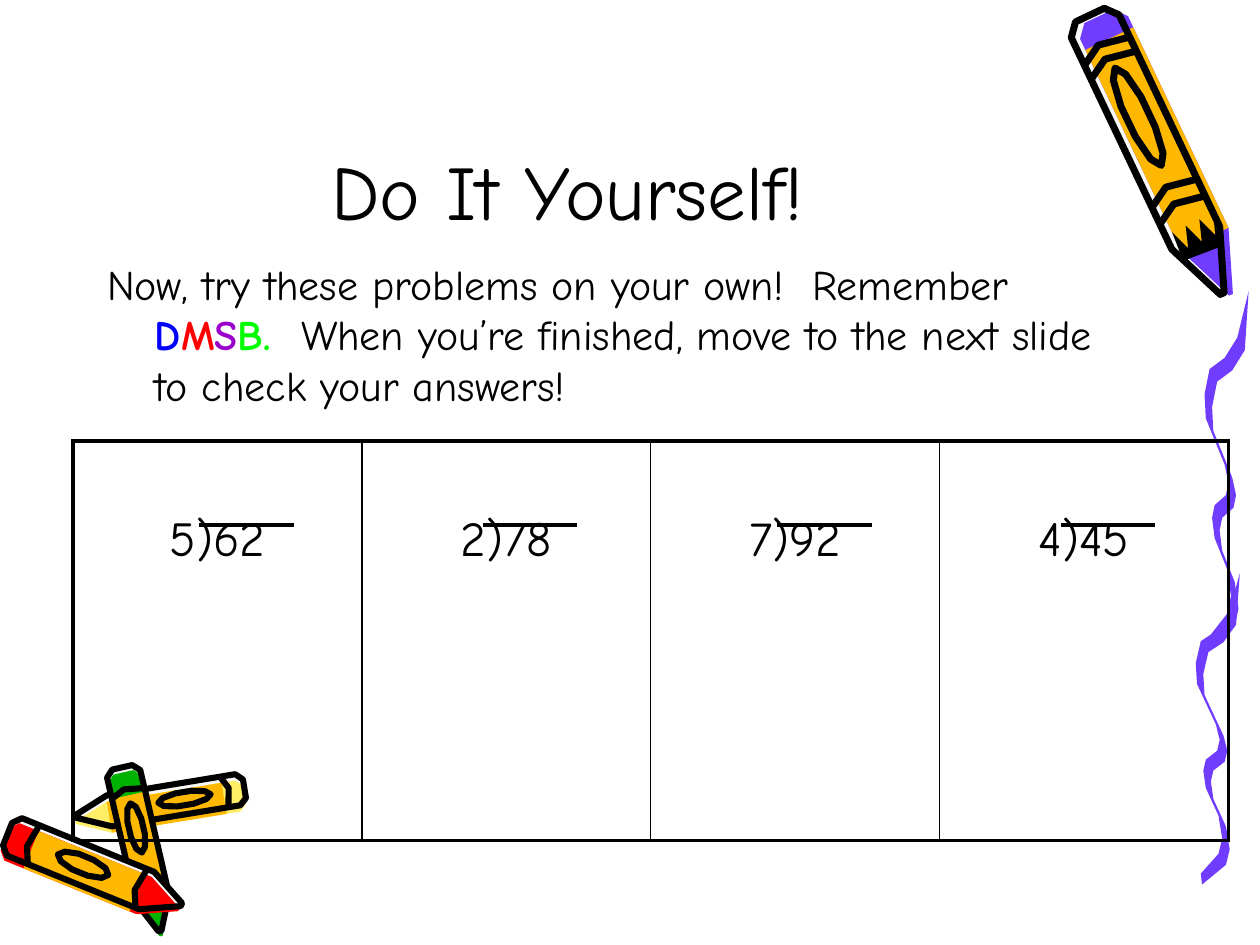
from dataclasses import dataclass
from itertools import cycle
from math import cos, hypot, pi, sin

from lxml import etree
from pptx import Presentation
from pptx.dml.color import RGBColor
from pptx.enum.shapes import MSO_CONNECTOR
from pptx.enum.text import MSO_ANCHOR, MSO_AUTO_SIZE, PP_ALIGN
from pptx.oxml.ns import qn
from pptx.util import Inches, Pt

BLACK = RGBColor(0x00, 0x00, 0x00)
PAPER = RGBColor(0xF8, 0xF8, 0xF8)
PURPLE = RGBColor(0x70, 0x3D, 0xFF)
ORANGE = RGBColor(0xFF, 0xB8, 0x00)
YELLOW = RGBColor(0xFF, 0xEF, 0x66)
RED = RGBColor(0xFF, 0x00, 0x00)
GREEN = RGBColor(0x00, 0xB2, 0x00)
DIVIDE_BLUE = RGBColor(0x00, 0x00, 0xFF)
SUBTRACT_VIOLET = RGBColor(0x99, 0x00, 0xCC)
BRING_DOWN_GREEN = RGBColor(0x00, 0xFF, 0x00)

INSTRUCTIONS = [
    ("Now, try these problems on your own!  Remember ", BLACK, False),
    ("D", DIVIDE_BLUE, True),
    ("M", RED, True),
    ("S", SUBTRACT_VIOLET, True),
    ("B.  ", BRING_DOWN_GREEN, True),
    ("When you’re finished, move to the next slide to check your answers!", BLACK, False),
]
PROBLEMS = ["5)62", "2)78", "7)92", "4)45"]
DIVISION_BAR_LEFTS = [1.58, 3.83, 6.17, 8.42]


@dataclass
class Crayon:
    """Shape along its axis: 0 is the blunt end, 1 the tip; -0.5 to 0.5 goes across."""
    wax: RGBColor
    butt: tuple
    tip: tuple
    width: float
    wrapper: tuple        # start and end of the paper wrapper along the axis
    bands: tuple          # ink rings along the axis
    oval: tuple           # start and end of the label along the axis
    color_shift: tuple    # the colour is printed slightly beside the ink
    ink: float = 3.5
    teeth: int = 0        # jagged ink marks where the wrapper ends
    shoulder: float = 0.8

    def points(self, local_points, shift=(0, 0)):
        """Turn (along, across) pairs into slide positions in inches."""
        dx, dy = self.tip[0] - self.butt[0], self.tip[1] - self.butt[1]
        scale = self.width / hypot(dx, dy)
        return [(self.butt[0] + along * dx - across * scale * dy + shift[0],
                 self.butt[1] + along * dy + across * scale * dx + shift[1])
                for along, across in local_points]

    def outline(self):
        half = [(self.shoulder, 0.5), (0.04, 0.5), (0, 0.3)]
        mirrored = [(along, -across) for along, across in reversed(half)]
        return [(1, 0.04), *half, *mirrored, (1, -0.04)]

    def wrapper_outline(self):
        start, end = self.wrapper
        return [(start, -0.5), (end, -0.5), (end, 0.5), (start, 0.5)]

    def band(self, along):
        return [(along, -0.5), (along - 0.02, 0.1), (along + 0.02, 0.5)]

    def label(self, steps=10):
        start, end = self.oval
        middle, reach = (start + end) / 2, (end - start) / 2
        turns = [2 * pi * step / steps for step in range(steps)]
        return [(middle + reach * cos(turn), 0.22 * sin(turn)) for turn in turns]

    def jagged_collar(self):
        count = 2 * self.teeth + 1
        edge = [(along, -0.5 + step / count) for step, along in
                zip(range(count), cycle((self.shoulder - 0.05, self.shoulder + 0.02)))]
        return edge + [(self.shoulder + 0.05, 0.4), (self.shoulder + 0.06, -0.35)]


BIG_CRAYON = Crayon(PURPLE, (8.65, 0.12), (9.7, 2.33), 0.42, wrapper=(0.08, 0.8),
                    bands=(0.12, 0.17, 0.63, 0.69), oval=(0.19, 0.54),
                    color_shift=(0.07, 0.01), ink=4, teeth=3)
SMALL_CRAYONS = [
    Crayon(YELLOW, (1.94, 6.26), (0.6, 6.48), 0.25, wrapper=(0.12, 0.8),
           bands=(0.11,), oval=(0.2, 0.51), color_shift=(0, 0.05)),
    Crayon(GREEN, (0.97, 6.09), (1.27, 7.39), 0.27, wrapper=(0.14, 0.8),
           bands=(0.15,), oval=(0.22, 0.52), color_shift=(0.01, 0.04)),
    Crayon(RED, (0.06, 6.62), (1.44, 7.18), 0.32, wrapper=(0.15, 0.76),
           bands=(0.14, 0.76), oval=(0.29, 0.58), color_shift=(-0.02, 0.04)),
]

# Bends of the purple trail from its top, in inches; a slanted nib gives it its width.
TRAIL_BENDS = [(0.35, 0), (0.26, 0.37), (0.16, 0.53), (0.04, 0.62), (0, 0.82), (0.01, 1.01),
               (0.16, 1.38), (0.19, 1.52), (0.17, 1.62), (0.08, 1.7), (0.06, 1.8),
               (0.08, 1.96), (0.18, 2.21), (0.21, 2.42), (0.18, 2.56), (0.04, 2.74)]
NIB = (0.06, 0.1)
TRAIL_PIECES = [(9.49, 4.55, 0.87), (9.56, 2.31, 1)]  # left, top, height scale


def trail(left, top, stretch):
    near_edge = [(left + x, top + y * stretch) for x, y in TRAIL_BENDS]
    far_edge = [(x + NIB[0], y + NIB[1] * stretch) for x, y in near_edge[1:-1]]
    end_x, end_y = near_edge[-1]
    return near_edge + [(end_x + 0.01, end_y + NIB[1] * stretch)] + far_edge[::-1]


class Worksheet:
    font_name = "Comic Neue"
    outer_border = 2.25
    inner_border = 1

    def __init__(self, slide):
        self.slide = slide

    def style_run(self, run, size, color=BLACK, bold=False):
        run.font.name = self.font_name
        run.font.size = Pt(size)
        run.font.color.rgb = color
        run.font.bold = bold

    def place(self, placeholder, left, top, width, height, anchor):
        placeholder.left, placeholder.top = Inches(left), Inches(top)
        placeholder.width, placeholder.height = Inches(width), Inches(height)
        frame = placeholder.text_frame
        frame.word_wrap = True
        frame.auto_size = MSO_AUTO_SIZE.NONE
        frame.vertical_anchor = anchor
        return frame

    def title(self, text):
        frame = self.place(self.slide.shapes.title, 0.75, 0.17, 7.51, 1.75, MSO_ANCHOR.BOTTOM)
        frame.text = text
        paragraph = frame.paragraphs[0]
        paragraph.alignment = PP_ALIGN.CENTER
        self.style_run(paragraph.runs[0], 44)

    def body(self, pieces):
        frame = self.place(self.slide.placeholders[1], 0.75, 2, 8.34, 1.75, MSO_ANCHOR.TOP)
        paragraph = frame.paragraphs[0]
        paragraph.space_before = Pt(4.8)
        properties = paragraph._p.get_or_add_pPr()
        properties.set("marL", str(Inches(0.38)))
        properties.set("indent", str(Inches(-0.38)))
        etree.SubElement(properties, qn("a:buNone"))
        for text, color, bold in pieces:
            run = paragraph.add_run()
            run.text = text
            self.style_run(run, 24, color, bold)

    def outline(self, shapes, points, fill=None, ink=None, close=True):
        units = [(round(x * 1000), round(y * 1000)) for x, y in points]
        builder = shapes.build_freeform(*units[0], scale=Inches(1) / 1000)
        builder.add_line_segments(units[1:], close=close)
        shape = builder.convert_to_shape()
        shape.shadow.inherit = False
        if fill is None:
            shape.fill.background()
        else:
            shape.fill.solid()
            shape.fill.fore_color.rgb = fill
        if ink is None:
            shape.line.fill.background()
        else:
            shape.line.color.rgb = BLACK
            shape.line.width = Pt(ink)

    def crayon(self, crayon):
        shapes = self.slide.shapes.add_group_shape().shapes
        body, shift = crayon.outline(), crayon.color_shift
        self.outline(shapes, crayon.points(body), fill=PAPER)
        self.outline(shapes, crayon.points(body, shift), fill=crayon.wax)
        self.outline(shapes, crayon.points(crayon.wrapper_outline(), shift), fill=ORANGE)
        for outline in (body, crayon.label()):
            self.outline(shapes, crayon.points(outline), ink=crayon.ink)
        for along in crayon.bands:
            self.outline(shapes, crayon.points(crayon.band(along)), ink=crayon.ink, close=False)
        if crayon.teeth:
            self.outline(shapes, crayon.points(crayon.jagged_collar()), fill=BLACK)

    def line(self, x1, y1, x2, y2, width):
        line = self.slide.shapes.add_connector(
            MSO_CONNECTOR.STRAIGHT, Inches(x1), Inches(y1), Inches(x2), Inches(y2))
        line.line.color.rgb = BLACK
        line.line.width = Pt(width)
        etree.SubElement(line._element.spPr, qn("a:effectLst"))

    def cell_borders(self, cell, widths):
        properties = cell._tc.get_or_add_tcPr()
        for position, (side, width) in enumerate(widths.items()):
            border = etree.Element(qn(f"a:{side}"), w=str(Pt(width)))
            fill = etree.SubElement(border, qn("a:solidFill"))
            etree.SubElement(fill, qn("a:srgbClr"), val=str(BLACK))
            properties.insert(position, border)

    def problem_table(self, problems):
        table = self.slide.shapes.add_table(
            1, len(problems), Inches(0.58), Inches(3.5), Inches(9.17), Inches(3.17)).table
        table.first_row = table.horz_banding = False
        last = len(problems) - 1
        for column, problem in enumerate(problems):
            cell = table.cell(0, column)
            cell.fill.background()
            cell.margin_top = Inches(0.57)
            cell.text = problem
            paragraph = cell.text_frame.paragraphs[0]
            paragraph.alignment = PP_ALIGN.CENTER
            self.style_run(paragraph.runs[0], 28)
            left = self.outer_border if column == 0 else self.inner_border
            right = self.outer_border if column == last else self.inner_border
            self.cell_borders(cell, {"lnL": left, "lnR": right,
                                     "lnT": self.outer_border, "lnB": self.outer_border})


def main():
    presentation = Presentation()
    presentation.slide_width, presentation.slide_height = Inches(10), Inches(7.5)
    sheet = Worksheet(presentation.slides.add_slide(presentation.slide_layouts[1]))
    for crayon in (*SMALL_CRAYONS, BIG_CRAYON):
        sheet.crayon(crayon)
    for piece in TRAIL_PIECES:
        sheet.outline(sheet.slide.shapes, trail(*piece), fill=PURPLE)
    sheet.title("Do It Yourself!")
    sheet.body(INSTRUCTIONS)
    sheet.problem_table(PROBLEMS)
    for left in DIVISION_BAR_LEFTS:
        sheet.line(left, 4.17, left + 0.75, 4.17, 2.25)
    presentation.save("out.pptx")


if __name__ == "__main__":
    main()
